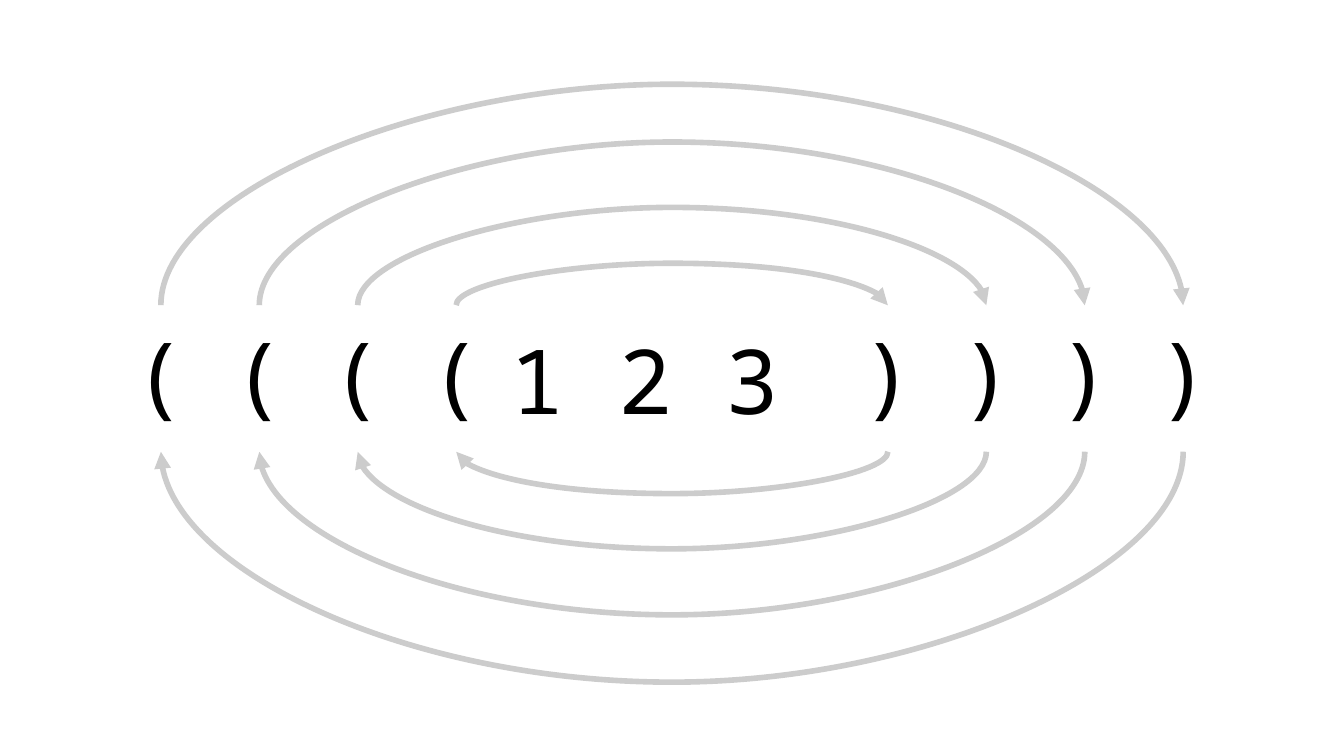
from pptx import Presentation
from pptx.dml.color import RGBColor
from pptx.enum.shapes import MSO_CONNECTOR as Link, MSO_SHAPE as Shape
from pptx.enum.text import MSO_ANCHOR as Anchor, PP_ALIGN as Align
from pptx.oxml.ns import qn
from pptx.util import Cm, Pt
from lxml.etree import SubElement

BLACK = RGBColor(0x00, 0x00, 0x00)
WHITE = RGBColor(0xFF, 0xFF, 0xFF)
GRAY = RGBColor(0xCC, 0xCC, 0xCC)

WIDTH, HEIGHT = 25.4, 14.29
CENTER = WIDTH / 2
ROW_TOP, ROW_H = 5.77, 2.77
FIRST_X, PITCH, PAREN_W = 3.04, 1.86, 1.52
DIGITS_W = 6.65
# Depths of the arcs above and below the row, from the outer pair inwards
ARC_DEPTHS = [(3.48, 3.63), (2.57, 2.57), (1.54, 1.53), (0.66, 0.66)]


class Slide:
    font, size, line_width = "Noto Sans Mono", Pt(48), Pt(3)

    def __init__(self, prs):
        self.s = prs.slides.add_slide(prs.slide_layouts[6])

    def set_text(self, sp, text, anchor):
        tf = sp.text_frame
        tf.word_wrap = True
        tf.vertical_anchor = anchor
        tf.margin_left = tf.margin_right = Cm(0.25)
        tf.margin_top = tf.margin_bottom = Cm(0.25)
        p = tf.paragraphs[0]
        p.text = text
        p.alignment = Align.CENTER
        p.font.name, p.font.size = self.font, self.size
        p.font.color.rgb = BLACK

    def digits(self, text):
        sp = self.s.shapes.add_textbox(Cm(CENTER - DIGITS_W / 2), Cm(ROW_TOP),
                                       Cm(DIGITS_W), Cm(ROW_H))
        self.set_text(sp, text, Anchor.MIDDLE)

    def paren(self, text, x):
        sp = self.s.shapes.add_shape(Shape.RECTANGLE, Cm(x - PAREN_W / 2),
                                     Cm(ROW_TOP), Cm(PAREN_W), Cm(ROW_H))
        sp.shadow.inherit = False
        sp.fill.solid()
        sp.fill.fore_color.rgb = WHITE
        sp.line.fill.background()
        self.set_text(sp, text, Anchor.TOP)

    def arc(self, span, y, depth, above):
        """Arrow bowing away from the row: rightwards above it, leftwards below.

        A curved connector bows sideways, so it is a thin upright one, turned;
        its adjustment is the depth as a multiple of its thickness.
        """
        thickness = 600
        c = self.s.shapes.add_connector(Link.CURVE, 0, 0, 0, 0)
        c.left, c.top = Cm(CENTER), Cm(y - span / 2)
        c.width, c.height = thickness, Cm(span)
        c.line.color.rgb, c.line.width = GRAY, self.line_width

        sp_pr = c._element.spPr
        xfrm = sp_pr.find(qn("a:xfrm"))
        xfrm.set("rot", str((270 if above else 90) * 60000))
        if above:
            xfrm.set("flipH", "1")
        ratio = round(Cm(depth) / thickness * 100000) * (-1 if above else 1)
        guides = sp_pr.find(qn("a:prstGeom")).get_or_add_avLst()
        SubElement(guides, qn("a:gd"), name="adj1", fmla=f"val {ratio}")
        SubElement(c.line._get_or_add_ln(), qn("a:tailEnd"), type="triangle")
        SubElement(sp_pr, qn("a:effectLst"))


def main():
    prs = Presentation()
    prs.slide_width, prs.slide_height = Cm(WIDTH), Cm(HEIGHT)
    slide = Slide(prs)
    slide.digits("1 2 3 ")
    for i, (up, down) in enumerate(ARC_DEPTHS):
        left = FIRST_X + i * PITCH
        right = WIDTH - left
        slide.paren("(", left)
        slide.paren(")", right)
        slide.arc(right - left, ROW_TOP, up, above=True)
        slide.arc(right - left, ROW_TOP + ROW_H, down, above=False)
    prs.save("out.pptx")


if __name__ == "__main__":
    main()
